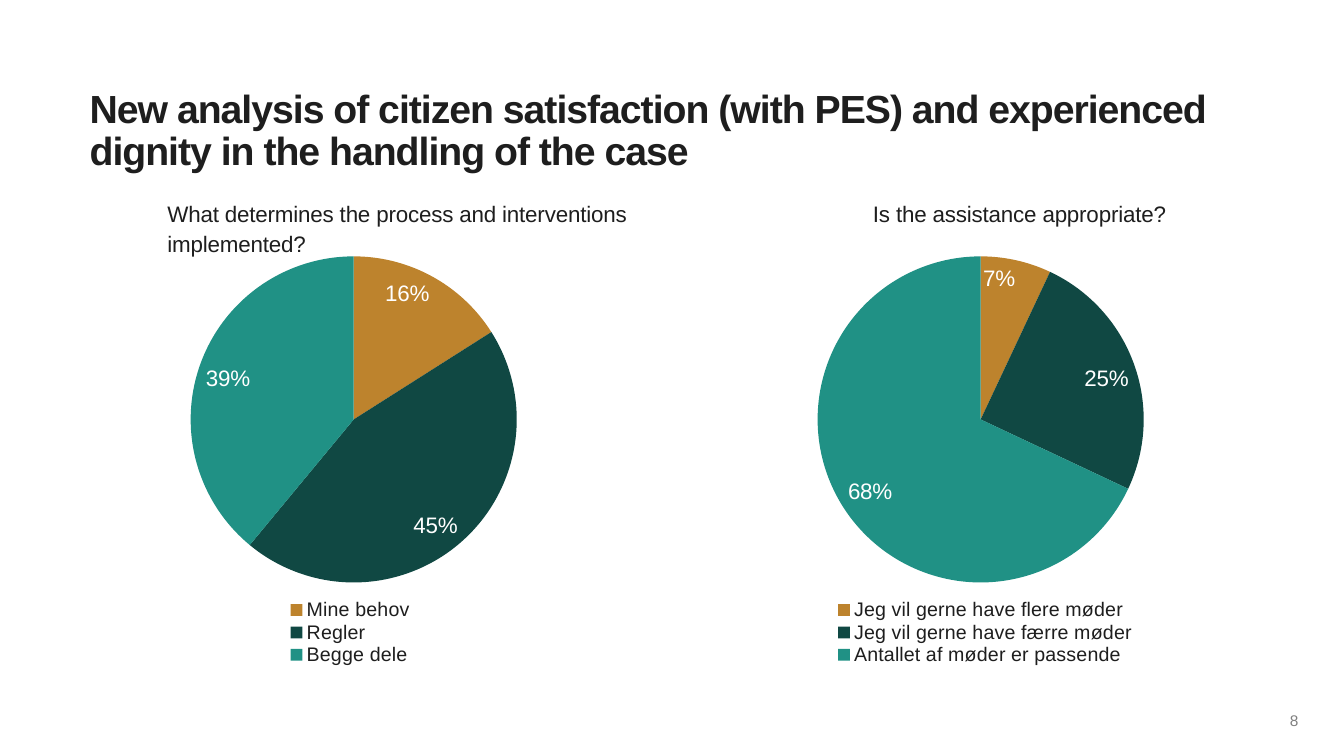
from lxml import etree
from pptx import Presentation
from pptx import util as u
from pptx.chart.data import CategoryChartData
from pptx.dml.color import RGBColor
from pptx.enum import chart as charts, text
from pptx.oxml.ns import qn

COLORS = {"ink": "1E1E1E", "grey": "7F7F7F", "white": "FFFFFF",
          "ochre": "BD832D", "forest": "104843", "teal": "209185"}
SLICES = ("ochre", "forest", "teal")
PLOT_AREA = (0.188, 0.092, 0.607, 0.723)


def apply(target, values):
    for name, value in values.items():
        setattr(target, name, value)


def layout_element(box, inner=False):
    """Return a manual chart layout for box (x, y, w, h as fractions)."""
    layout = etree.Element(qn("c:layout"))
    manual = etree.SubElement(layout, qn("c:manualLayout"))
    entries = [("layoutTarget", "inner")] if inner else []
    entries += [("xMode", "edge"), ("yMode", "edge")]
    entries += zip("xywh", box)
    for tag, value in entries:
        etree.SubElement(manual, qn(f"c:{tag}")).set("val", str(value))
    return layout


class SlideBuilder:
    font_name = "Arial"

    def __init__(self, presentation):
        self.slide = presentation.slides.add_slide(presentation.slide_layouts[6])

    def style_font(self, font, size, color="ink", bold=False):
        apply(font, {"name": self.font_name, "size": u.Pt(size), "bold": bold})
        font.color.rgb = RGBColor.from_string(COLORS[color])

    def add_text(self, wording, box, size, color="ink", bold=False, spacing=0,
                 frame_format=None, paragraph_format=None):
        shape = self.slide.shapes.add_textbox(*map(u.Cm, box))
        frame = shape.text_frame
        margins = {f"margin_{side}": 0 for side in ("left", "top", "right", "bottom")}
        apply(frame, {"word_wrap": True, **margins, **(frame_format or {})})
        paragraph = frame.paragraphs[0]
        apply(paragraph, paragraph_format or {})
        run = paragraph.add_run()
        run.text = wording
        self.style_font(run.font, size, color, bold)
        if spacing:
            run.font._element.set("spc", str(round(spacing * 100)))

    def add_pie(self, answers, box, legend_box):
        data = CategoryChartData(number_format="0%")
        data.categories = list(answers)
        data.add_series("Series 1", list(answers.values()))
        frame = self.slide.shapes.add_chart(
            charts.XL_CHART_TYPE.PIE, *map(u.Cm, box), data)
        chart = frame.chart
        apply(chart, {"has_title": False, "has_legend": True})
        self.style_font(chart.font, 10)

        # Slices and their labels
        plot = chart.plots[0]
        apply(plot, {"vary_by_categories": True, "has_data_labels": True})
        for index, color in enumerate(SLICES):
            fill = plot.series[0].points[index].format.fill
            fill.solid()
            fill.fore_color.rgb = RGBColor.from_string(COLORS[color])
        labels = plot.data_labels
        apply(labels, {"show_value": True, "show_percentage": False,
                       "number_format": "0%", "number_format_is_linked": False,
                       "position": charts.XL_LABEL_POSITION.INSIDE_END})
        self.style_font(labels.font, 16, "white")

        # Legend and manual layouts
        apply(chart.legend, {"position": charts.XL_LEGEND_POSITION.BOTTOM,
                             "include_in_layout": False})
        self.style_font(chart.legend.font, 14)
        root = chart._chartSpace
        for old in list(root.iter(qn("c:layout"))):
            old.getparent().remove(old)
        plot_area = next(root.iter(qn("c:plotArea")))
        plot_area.insert(0, layout_element(PLOT_AREA, inner=True))
        next(root.iter(qn("c:legendPos"))).addnext(layout_element(legend_box))


def main():
    presentation = Presentation()
    apply(presentation, {"slide_width": u.Cm(33.87), "slide_height": u.Cm(19.05)})
    builder = SlideBuilder(presentation)

    # Title
    builder.add_text(
        "New analysis of citizen satisfaction (with PES) and experienced "
        "dignity in the handling of the case",
        (2.26, 2.26, 29.36, 1.12), 28, bold=True, spacing=-0.7,
        paragraph_format={"line_spacing": 0.9})

    # Questions, each with its pie
    questions = [
        ("What determines the process and interventions implemented?",
         4.22, 13.54, 2.26, (0.36, 0.85, 0.25, 0.15),
         {"Mine behov": 0.16, "Regler": 0.45, "Begge dele": 0.39}),
        ("Is the assistance appropriate?",
         22, 9.68, 18.06, (0.21, 0.85, 0.58, 0.15),
         {"Jeg vil gerne have flere møder": 0.07,
          "Jeg vil gerne have færre møder": 0.25,
          "Antallet af møder er passende": 0.68}),
    ]
    for question, text_left, text_width, pie_left, legend_box, answers in questions:
        builder.add_text(
            question, (text_left, 4.98, text_width, 1.15), 16, spacing=-0.1,
            paragraph_format={"line_spacing": 1.1, "space_after": u.Pt(6)})
        builder.add_pie(answers, (pie_left, 5.41, 13.54, 11.38), legend_box)

    # Slide number
    builder.add_text(
        "8", (31.6, 17.98, 1.12, 0.36), 11, "grey",
        frame_format={"vertical_anchor": text.MSO_ANCHOR.MIDDLE},
        paragraph_format={"alignment": text.PP_ALIGN.RIGHT})

    presentation.save("out.pptx")


if __name__ == "__main__":
    main()
